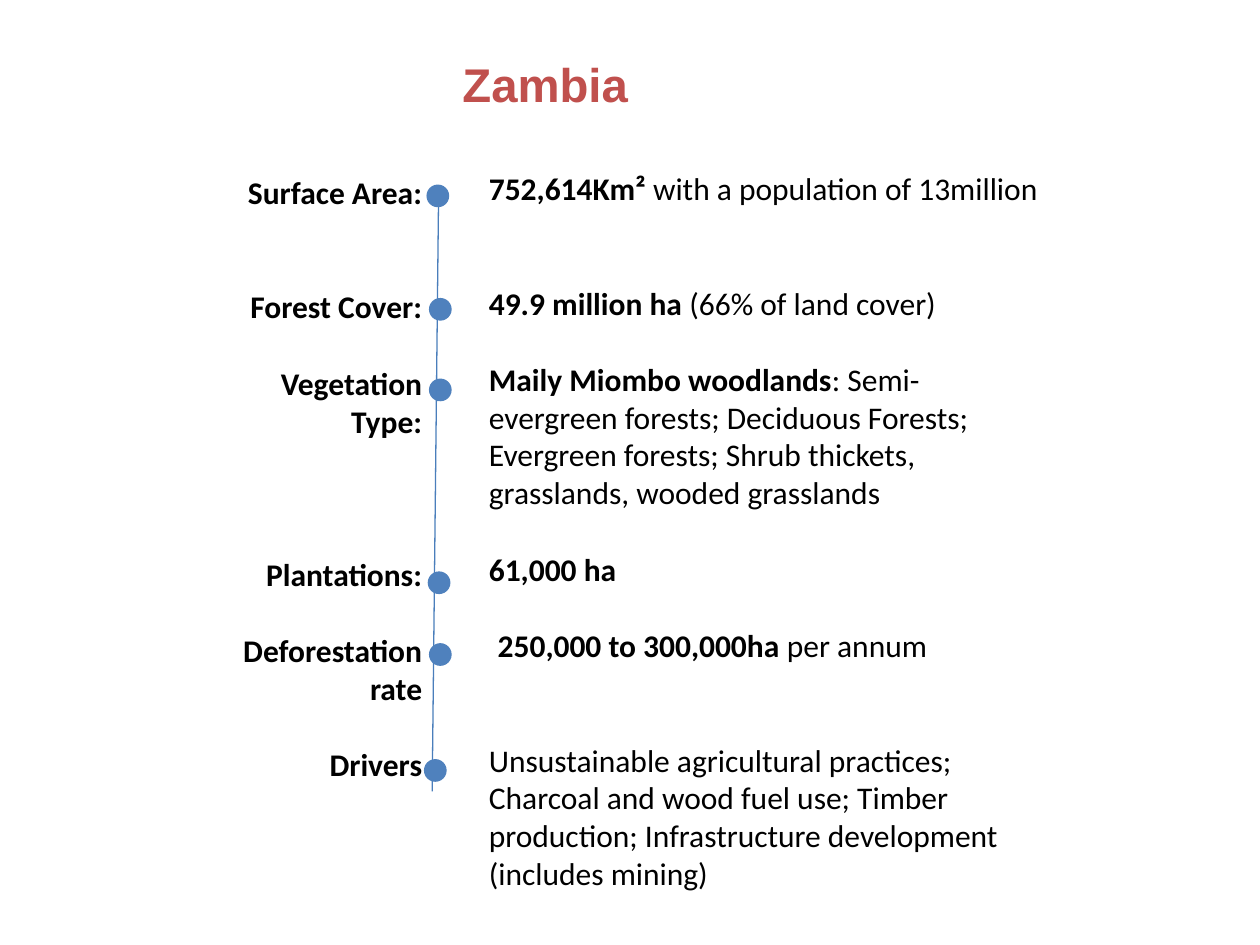
from pptx import Presentation, util as u
from pptx.dml.color import RGBColor
from pptx.enum import shapes, text
from pptx.oxml.ns import qn
from lxml import etree

BLANK_LINE = 22  # points, one line of 18 pt Calibri

# label, blank lines above it, value spans (text, bold), blank lines above them
FACTS = [
    ("Surface Area:", 0, [("752,614Km² ", True), ("with a population of 13million", False)], 0),
    ("Forest Cover:", 2, [("49.9 million ha ", True), ("(66% of land cover)", False)], 2),
    ("Vegetation Type:", 1, [
        ("Maily Miombo woodlands", True),
        (": Semi-evergreen forests; Deciduous Forests; Evergreen forests; "
         "Shrub thickets, grasslands, wooded grasslands", False)], 1),
    ("Plantations:", 3, [("61,000 ha", True)], 1),
    ("Deforestation rate", 1, [("250,000 to 300,000ha ", True), ("per annum", False)], 1),
    ("Drivers", 1, [
        ("Unsustainable agricultural practices; Charcoal and wood fuel use; "
         "Timber production; Infrastructure development (includes mining)", False)], 2),
]
DOTS = [(3.39, 1.47), (3.41, 2.37), (3.41, 3.01), (3.4, 4.54), (3.41, 5.11), (3.37, 6.03)]


def colour(value):
    return RGBColor.from_string(value)


class FactPage:
    font, size, ink = "Calibri", 18, "000000"
    dot_colour, line_colour, title_colour = "4F81BD", "4A7EBB", "C0504D"

    def __init__(self, deck):
        self.page = deck.slides.add_slide(deck.slide_layouts[6])

    def box(self, left, top, width, height, inset_top=0.04):
        box = self.page.shapes.add_textbox(*map(u.Inches, (left, top, width, height)))
        frame = box.text_frame
        frame.word_wrap = True
        frame.margin_left = frame.margin_right = u.Inches(0.07)
        frame.margin_top, frame.margin_bottom = u.Inches(inset_top), u.Inches(0.04)
        return frame

    def span(self, para, words, bold, font=None, size=None, ink=None):
        span = para.add_run()
        span.text = words
        span.font.name = font or self.font
        span.font.size = u.Pt(size or self.size)
        span.font.bold = bold
        span.font.color.rgb = colour(ink or self.ink)

    def title(self, words):
        para = self.box(3.6, 0.4, 2.62, 0.51).paragraphs[0]
        self.span(para, words, True, "Arial", 27, self.title_colour)

    def column(self, frame, rows, align):
        """Fill a box with rows of (spans, blank lines above, left indent)."""
        for index, (spans, gap, indent) in enumerate(rows):
            para = frame.add_paragraph() if index else frame.paragraphs[0]
            para.alignment = align
            para.space_before = u.Pt(gap * BLANK_LINE)
            para._p.get_or_add_pPr().set("marL", str(u.Inches(indent)))
            for words, bold in spans:
                self.span(para, words, bold)

    def line(self, x1, y1, x2, y2):
        line = self.page.shapes.add_connector(
            shapes.MSO_CONNECTOR.STRAIGHT, *map(u.Inches, (x1, y1, x2, y2)))
        line.line.color.rgb = colour(self.line_colour)
        line.line.width = u.Pt(0.75)
        etree.SubElement(line._element.spPr, qn("a:effectLst"))

    def dot(self, left, top, size=0.17):
        dot = self.page.shapes.add_shape(
            shapes.MSO_SHAPE.OVAL, *map(u.Inches, (left, top, size, size)))
        dot.shadow.inherit = False
        dot.fill.solid()
        dot.fill.fore_color.rgb = colour(self.dot_colour)
        dot.line.color.rgb = colour(self.dot_colour)
        dot.line.width = u.Pt(0.75)


def main():
    deck = Presentation()
    deck.slide_width, deck.slide_height = u.Inches(10), u.Inches(7.5)
    page = FactPage(deck)
    labels = [([(label, True)], gap, 0.38) for label, gap, _, _ in FACTS]
    values = [(spans, gap, 0.45 if label.startswith("Deforestation") else 0.38)
              for label, _, spans, gap in FACTS]
    page.column(page.box(1.3, 1.33, 2.12, 5.62), labels, text.PP_ALIGN.RIGHT)
    page.line(3.48, 1.63, 3.43, 6.28)
    page.column(page.box(3.43, 1, 4.92, 6.3, inset_top=0.34), values, text.PP_ALIGN.LEFT)
    for left, top in DOTS:
        page.dot(left, top)
    page.title("Zambia")
    deck.save("out.pptx")


if __name__ == "__main__":
    main()
